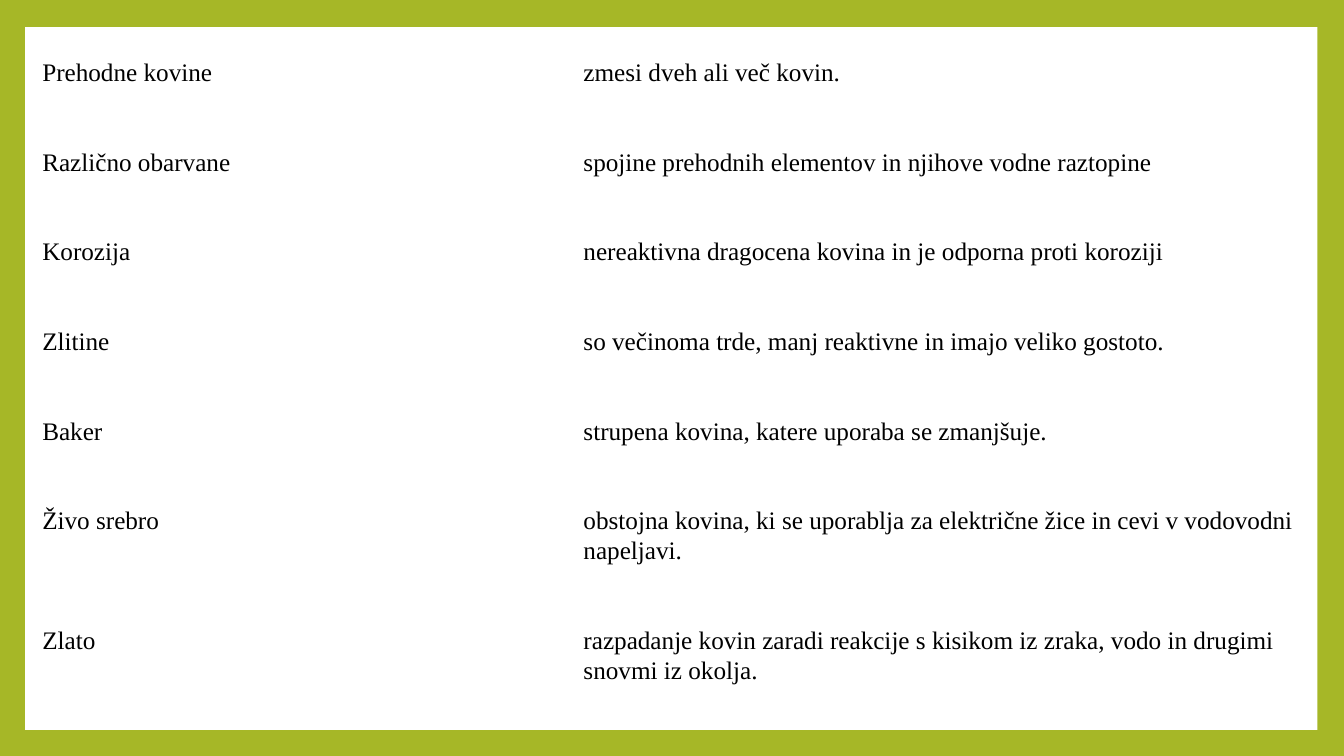
from pptx import Presentation
from pptx.dml.color import RGBColor
from pptx.enum.shapes import MSO_SHAPE
from pptx.util import Pt

PAIRS = [
    ("Prehodne kovine", "zmesi dveh ali več kovin."),
    ("Različno obarvane", "spojine prehodnih elementov in njihove vodne raztopine"),
    ("Korozija", "nereaktivna dragocena kovina in je odporna proti koroziji"),
    ("Zlitine", "so večinoma trde, manj reaktivne in imajo veliko gostoto."),
    ("Baker", "strupena kovina, katere uporaba se zmanjšuje."),
    ("Živo srebro", "obstojna kovina, ki se uporablja za električne žice "
                    "in cevi v vodovodni napeljavi."),
    ("Zlato", "razpadanje kovin zaradi reakcije s kisikom iz zraka, "
              "vodo in drugimi snovmi iz okolja."),
]
WIDTHS = [386.6, 547.9]
LINE = 21.35          # height of one text line
LONG = 5              # from this row on, the right text takes two lines
PLAIN = "{2D5ABB26-0587-4C30-8999-92F81FD0307C}"  # table style with no grid


def color(code):
    return RGBColor.from_string(code)


def assign(item, values):
    for name, value in values.items():
        setattr(item, name, value)


def paint(fill, code):
    fill.solid()
    fill.fore_color.rgb = color(code)


def add_panel(slide, left, top, width, height):
    panel = slide.shapes.add_shape(
        MSO_SHAPE.RECTANGLE, Pt(left), Pt(top), Pt(width), Pt(height))
    panel.shadow.inherit = False
    paint(panel.fill, "FFFFFF")
    panel.line.fill.background()


def write_cell(cell, text):
    cell.fill.background()
    assign(cell, {"margin_left": Pt(5), "margin_right": Pt(5),
                  "margin_top": Pt(LINE), "margin_bottom": Pt(0)})
    cell.text = text
    para = cell.text_frame.paragraphs[0]
    para.line_spacing = 1.07
    assign(para.font, {"name": "Times New Roman", "size": Pt(18)})
    para.font.color.rgb = color("000000")


def add_pairs(slide, left, top):
    # Each row has one free line above and below its text
    heights = [LINE * (4 if row >= LONG else 3) for row in range(len(PAIRS))]
    frame = slide.shapes.add_table(
        len(PAIRS), len(WIDTHS), Pt(left), Pt(top),
        Pt(sum(WIDTHS)), Pt(sum(heights)))
    table = frame.table
    assign(table, {"first_row": False, "horz_banding": False})
    table._tbl.tblPr.find("{*}tableStyleId").text = PLAIN
    for column, width in zip(table.columns, WIDTHS):
        column.width = Pt(width)
    for row, height, pair in zip(table.rows, heights, PAIRS):
        row.height = Pt(height)
        for cell, text in zip(row.cells, pair):
            write_cell(cell, text)


def main():
    deck = Presentation()
    assign(deck, {"slide_width": Pt(960), "slide_height": Pt(540)})
    slide = deck.slides.add_slide(deck.slide_layouts[6])

    # Green frame around a white panel
    paint(slide.background.fill, "A6B727")
    add_panel(slide, 18, 19.4, 923, 502)

    # Terms and descriptions
    add_pairs(slide, 25.2, 19.4)
    deck.save("out.pptx")


if __name__ == "__main__":
    main()
